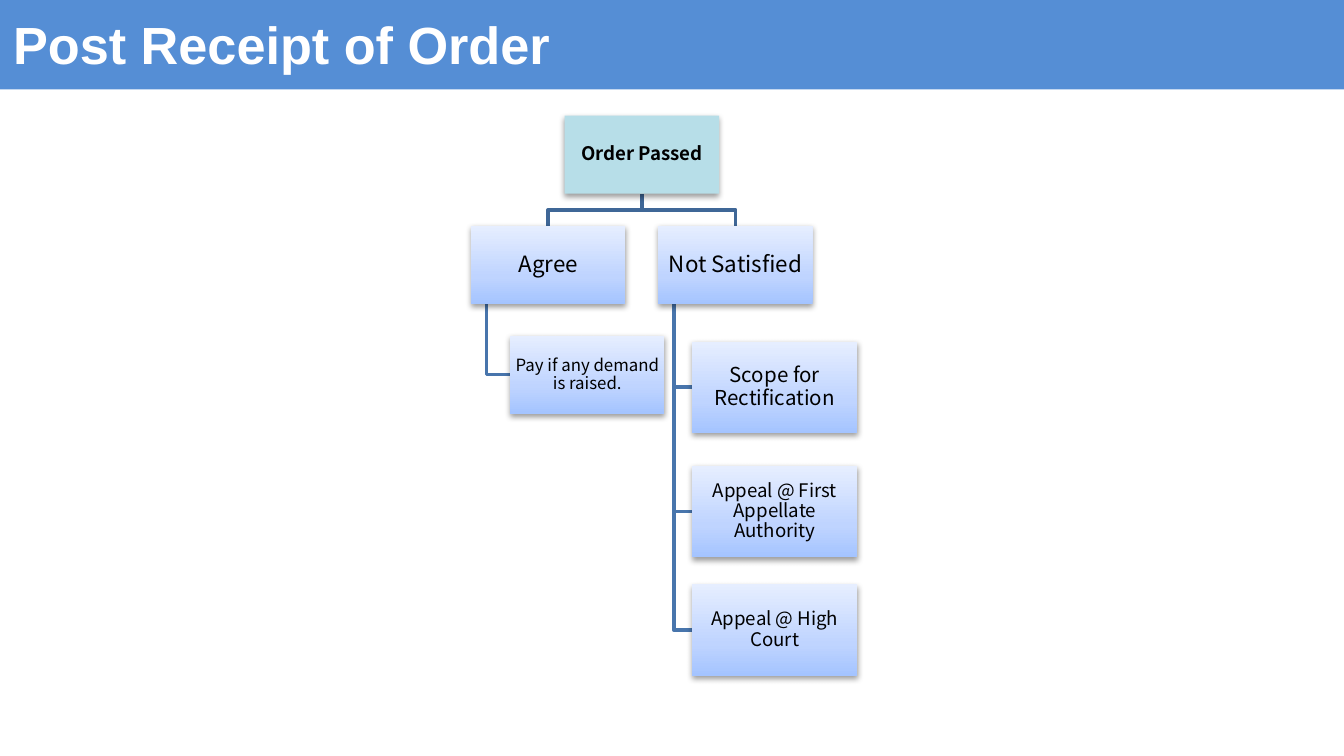
from lxml.etree import SubElement
from pptx import Presentation
from pptx.dml.color import RGBColor
from pptx.enum.shapes import MSO_SHAPE
from pptx.enum.text import MSO_ANCHOR, PP_ALIGN
from pptx.oxml.ns import qn
from pptx.util import Pt

NODE_FONT = "Noto Sans CJK KR"
GRADIENT = [(0, "A4C4FF"), (35, "BFD4FF"), (100, "E6EEFF")]
NODE_WIDTH, NODE_HEIGHT = 82.8, 41.8
LEAF_WIDTH, LEAF_HEIGHT = 88.6, 49
BRANCH_PITCH, LEVEL_GAP = 100.3, 17.2
SPINE_INSET = 8.3


def color(value):
    return RGBColor.from_string(value)


def write_text(shape, text, size, font_name, font_color, bold=False):
    frame = shape.text_frame
    frame.word_wrap = True
    frame.vertical_anchor = MSO_ANCHOR.MIDDLE
    frame.text = text
    para = frame.paragraphs[0]
    font = para.runs[0].font
    font.size, font.name, font.bold = Pt(size), font_name, bold
    font.color.rgb = color(font_color)
    return para


def add_rectangle(page, left, top, width, height):
    shape = page.shapes.add_shape(
        MSO_SHAPE.RECTANGLE, Pt(left), Pt(top), Pt(width), Pt(height))
    shape.shadow.inherit = False
    shape.line.fill.background()
    return shape


def fill_gradient(shape):
    shape.fill.gradient()
    shape.fill.gradient_angle = 90
    stops = shape._element.spPr.find(".//" + qn("a:gsLst"))
    for stop in list(stops):
        stops.remove(stop)
    for position, value in GRADIENT:
        stop = SubElement(stops, qn("a:gs"), pos=str(position * 1000))
        SubElement(stop, qn("a:srgbClr"), val=value)


def add_soft_shadow(shape):
    effects = shape._element.spPr.find(qn("a:effectLst"))
    shadow = SubElement(effects, qn("a:outerShdw"), blurRad="40000",
                        dist="20000", dir="5400000", rotWithShape="0")
    tint = SubElement(shadow, qn("a:srgbClr"), val="000000")
    SubElement(tint, qn("a:alpha"), val="38000")


def add_node(page, box, text, size, fill=None, bold=False):
    node = add_rectangle(page, *box)
    if fill:
        node.fill.solid()
        node.fill.fore_color.rgb = color(fill)
    else:
        fill_gradient(node)
    add_soft_shadow(node)
    frame = node.text_frame
    frame.margin_left = frame.margin_right = Pt(0.7)
    frame.margin_top = frame.margin_bottom = Pt(0.7)
    para = write_text(node, text, size, NODE_FONT, "000000", bold)
    para.alignment = PP_ALIGN.CENTER
    para.line_spacing = 0.9


def add_link(page, points, line_color):
    start, *rest = [(Pt(x), Pt(y)) for x, y in points]
    builder = page.shapes.build_freeform(*start)
    builder.add_line_segments(rest, close=False)
    link = builder.convert_to_shape()
    link.shadow.inherit = False
    link.fill.background()
    link.line.color.rgb = color(line_color)
    link.line.width = Pt(2)


def add_title_bar(page, left, top, width, height):
    bar = add_rectangle(page, left, top, width, height)
    bar.fill.solid()
    bar.fill.fore_color.rgb = color("558ED5")
    para = write_text(bar, "Post Receipt of Order", 28, "Arial", "FFFFFF", True)
    para.alignment = PP_ALIGN.LEFT


def add_order_tree(page, left, top):
    root_left = left + BRANCH_PITCH / 2
    root_center = root_left + NODE_WIDTH / 2
    root_bottom = top + NODE_HEIGHT
    branch_top = root_bottom + LEVEL_GAP
    branch_bottom = branch_top + NODE_HEIGHT

    # Each branch: label and its leaves as (text, size, box)
    right = left + 118.5
    branches = [
        ("Agree", [
            ("Pay if any demand is raised.", 9,
             (left + 20.9, top + 117.8, NODE_WIDTH, NODE_HEIGHT))]),
        ("Not Satisfied", [
            (text, size, (right, top + offset, LEAF_WIDTH, LEAF_HEIGHT))
            for text, size, offset in [
                ("Scope for Rectification", 11, 121),
                ("Appeal @ First Appellate Authority", 10, 187.6),
                ("Appeal @ High Court", 10, 251)]]),
    ]

    nodes = [((root_left, top, NODE_WIDTH, NODE_HEIGHT),
              "Order Passed", 10, "B7DEE8", True)]
    # Links lie behind the boxes
    for index, (label, leaves) in enumerate(branches):
        branch_left = left + index * BRANCH_PITCH
        branch_center = branch_left + NODE_WIDTH / 2
        middle = root_bottom + LEVEL_GAP / 2
        add_link(page, [(root_center, root_bottom), (root_center, middle),
                        (branch_center, middle), (branch_center, branch_top)],
                 "3F6797")
        nodes.append(((branch_left, branch_top, NODE_WIDTH, NODE_HEIGHT),
                      label, 12))
        spine = branch_left + SPINE_INSET
        for text, size, box in leaves:
            leaf_middle = box[1] + box[3] / 2
            add_link(page, [(spine, branch_bottom), (spine, leaf_middle),
                            (box[0], leaf_middle)], "4875AC")
            nodes.append((box, text, size))

    for node in nodes:
        add_node(page, *node)


def main():
    deck = Presentation()
    deck.slide_width, deck.slide_height = Pt(720), Pt(405)
    page = deck.slides.add_slide(deck.slide_layouts[6])
    add_title_bar(page, 0, -1.5, 720, 49.5)
    add_order_tree(page, 252.3, 62)
    deck.save("out.pptx")


if __name__ == "__main__":
    main()
